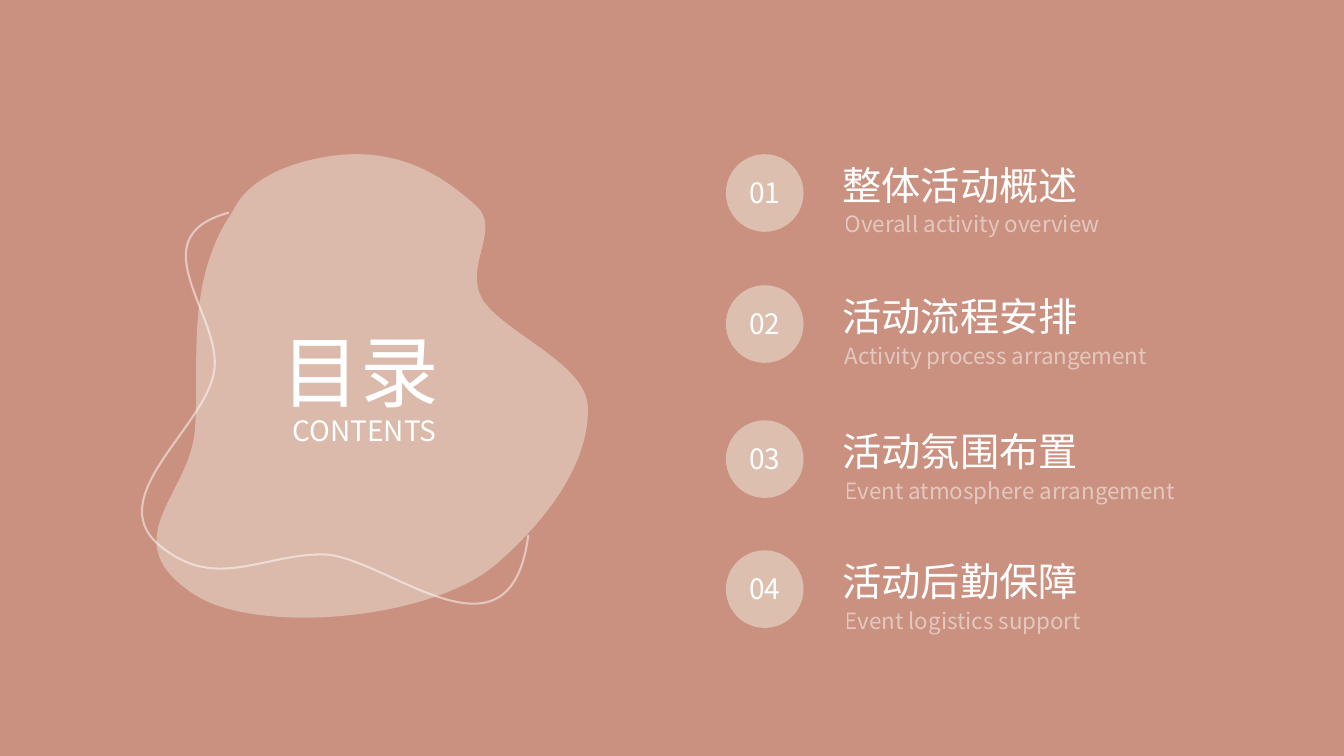
from dataclasses import dataclass

from lxml import etree
from pptx import Presentation
from pptx.dml.color import RGBColor
from pptx.enum.shapes import MSO_SHAPE
from pptx.enum.text import MSO_AUTO_SIZE, PP_ALIGN
from pptx.oxml.ns import qn
from pptx.shapes.autoshape import Shape
from pptx.slide import Slide
from pptx.util import Inches, Pt

RECTANGLE, OVAL = MSO_SHAPE.RECTANGLE, MSO_SHAPE.OVAL
LEFT, CENTER = PP_ALIGN.LEFT, PP_ALIGN.CENTER
GROW = MSO_AUTO_SIZE.SHAPE_TO_FIT_TEXT

TERRACOTTA = RGBColor(0xCA, 0x91, 0x80)
SAND = RGBColor(0xDD, 0xBF, 0xB0)
WHITE = RGBColor(0xFF, 0xFF, 0xFF)
FONT = "Noto Sans CJK SC"

SLIDE_WIDTH, SLIDE_HEIGHT = 13.33, 7.5
BADGE_LEFT, BADGE_SIZE = 7.2, 0.77

Point = tuple[float, float]


@dataclass
class Chapter:
    top: float
    title: str
    subtitle: str


@dataclass
class Outline:
    """Frame of a curve, and its start point followed by three points per Bézier."""
    left: float
    top: float
    width: float
    height: float
    nodes: list[Point]
    closed: bool


CHAPTERS = [
    Chapter(1.53, "整体活动概述", "Overall activity overview"),
    Chapter(2.83, "活动流程安排", "Activity process arrangement"),
    Chapter(4.17, "活动氛围布置", "Event atmosphere arrangement"),
    Chapter(5.46, "活动后勤保障", "Event logistics support"),
]

BLOB = Outline(1.55, 1.53, 4.28, 4.6, [
    (3.21, 1.56),
    (3.98, 1.42), (4.45, 1.8), (4.72, 2.04),
    (4.98, 2.27), (4.6, 2.63), (4.78, 2.96),
    (4.97, 3.29), (5.81, 3.6), (5.83, 4.03),
    (5.85, 4.47), (5.58, 5.02), (4.93, 5.59),
    (4.28, 6.16), (2.54, 6.3), (1.93, 5.9),
    (1.11, 5.37), (1.87, 4.92), (1.93, 4.29),
    (1.99, 3.66), (1.82, 2.82), (2.3, 2.11),
    (2.32, 2.09), (2.43, 1.7), (3.21, 1.56),
], closed=True)
SQUIGGLE = Outline(1.41, 2.11, 3.83, 3.88, [
    (2.27, 2.11),
    (1.34, 2.36), (2.24, 3.16), (2.12, 3.71),
    (2.01, 4.25), (1.03, 4.93), (1.57, 5.4),
    (2.12, 5.87), (2.57, 5.51), (3.18, 5.5),
    (3.79, 5.48), (5.06, 6.73), (5.24, 5.31),
], closed=False)


def set_opacity(properties: etree._Element, percent: int) -> None:
    """Make the first solid colour below the given element translucent."""
    color = next(properties.iter(qn("a:srgbClr")))
    etree.SubElement(color, qn("a:alpha"), val=str(percent * 1000))


def add_curve(slide: Slide, outline: Outline) -> Shape:
    """Build a polygon through all nodes, then turn its lines into Béziers."""
    start, *others = [(Inches(x), Inches(y)) for x, y in outline.nodes]
    builder = slide.shapes.build_freeform(*start)
    builder.add_line_segments(others, close=outline.closed)
    curve = builder.convert_to_shape()
    curve.shadow.inherit = False
    curve.left, curve.top = Inches(outline.left), Inches(outline.top)
    curve.width, curve.height = Inches(outline.width), Inches(outline.height)

    path = next(curve._element.iter(qn("a:path")))
    path.set("w", str(curve.width))
    path.set("h", str(curve.height))
    points = list(path.iter(qn("a:pt")))
    for point, (x, y) in zip(points, [start, *others]):
        point.set("x", str(x - curve.left))
        point.set("y", str(y - curve.top))
    lines = path.findall(qn("a:lnTo"))
    for first in range(0, len(lines), 3):
        bezier = etree.Element(qn("a:cubicBezTo"))
        lines[first].addprevious(bezier)
        for line in lines[first:first + 3]:
            bezier.append(line[0])
            path.remove(line)
    return curve


def add_filled(slide: Slide, kind: MSO_SHAPE, left: float, top: float,
               width: float, height: float, color: RGBColor) -> None:
    shape = slide.shapes.add_shape(
        kind, Inches(left), Inches(top), Inches(width), Inches(height))
    shape.shadow.inherit = False
    shape.fill.solid()
    shape.fill.fore_color.rgb = color
    shape.line.fill.background()


def add_text(slide: Slide, text: str, left: float, top: float, width: float,
             height: float, size: int, align: PP_ALIGN = LEFT,
             opacity: int = 100, line_spacing: float = 1.0) -> None:
    box = slide.shapes.add_textbox(
        Inches(left), Inches(top), Inches(width), Inches(height))
    frame = box.text_frame
    frame.word_wrap = True
    frame.auto_size = GROW
    paragraph = frame.paragraphs[0]
    paragraph.text = text
    paragraph.alignment = align
    paragraph.line_spacing = line_spacing
    paragraph.font.size = Pt(size)
    paragraph.font.name = FONT
    paragraph.font.color.rgb = WHITE
    defaults = next(paragraph._p.iter(qn("a:defRPr")))
    etree.SubElement(defaults, qn("a:ea"), typeface=FONT)
    if opacity < 100:
        set_opacity(defaults, opacity)


def add_chapter(slide: Slide, number: int, chapter: Chapter) -> None:
    top = chapter.top
    add_text(slide, chapter.title, 8.26, top + 0.02, 2.63, 0.57, 28)
    add_filled(slide, OVAL, BADGE_LEFT, top, BADGE_SIZE, BADGE_SIZE, SAND)
    add_text(slide, f"{number:02}", 7.27, top + 0.16, 0.63, 0.45, 20, CENTER)
    add_text(slide, chapter.subtitle, 8.28, top + 0.51, 3.88, 0.38, 16, opacity=50)


def main() -> None:
    presentation = Presentation()
    presentation.slide_width = Inches(SLIDE_WIDTH)
    presentation.slide_height = Inches(SLIDE_HEIGHT)
    slide = presentation.slides.add_slide(presentation.slide_layouts[6])

    add_filled(slide, RECTANGLE, 0, 0, SLIDE_WIDTH, SLIDE_HEIGHT, TERRACOTTA)

    blob = add_curve(slide, BLOB)
    blob.fill.solid()
    blob.fill.fore_color.rgb = SAND
    set_opacity(blob._element.spPr, 90)
    blob.line.fill.background()

    squiggle = add_curve(slide, SQUIGGLE)
    squiggle.fill.background()
    squiggle.line.color.rgb = WHITE
    squiggle.line.width = Pt(1.5)
    set_opacity(squiggle._element.spPr, 50)

    for number, chapter in enumerate(CHAPTERS, start=1):
        add_chapter(slide, number, chapter)

    add_text(slide, "CONTENTS", 2.57, 4.05, 2.09, 0.44, 20, CENTER)
    add_text(slide, "目录", 2.49, 2.97, 2.17, 1.14, 56, CENTER, line_spacing=1.2)

    presentation.save("out.pptx")


if __name__ == "__main__":
    main()
